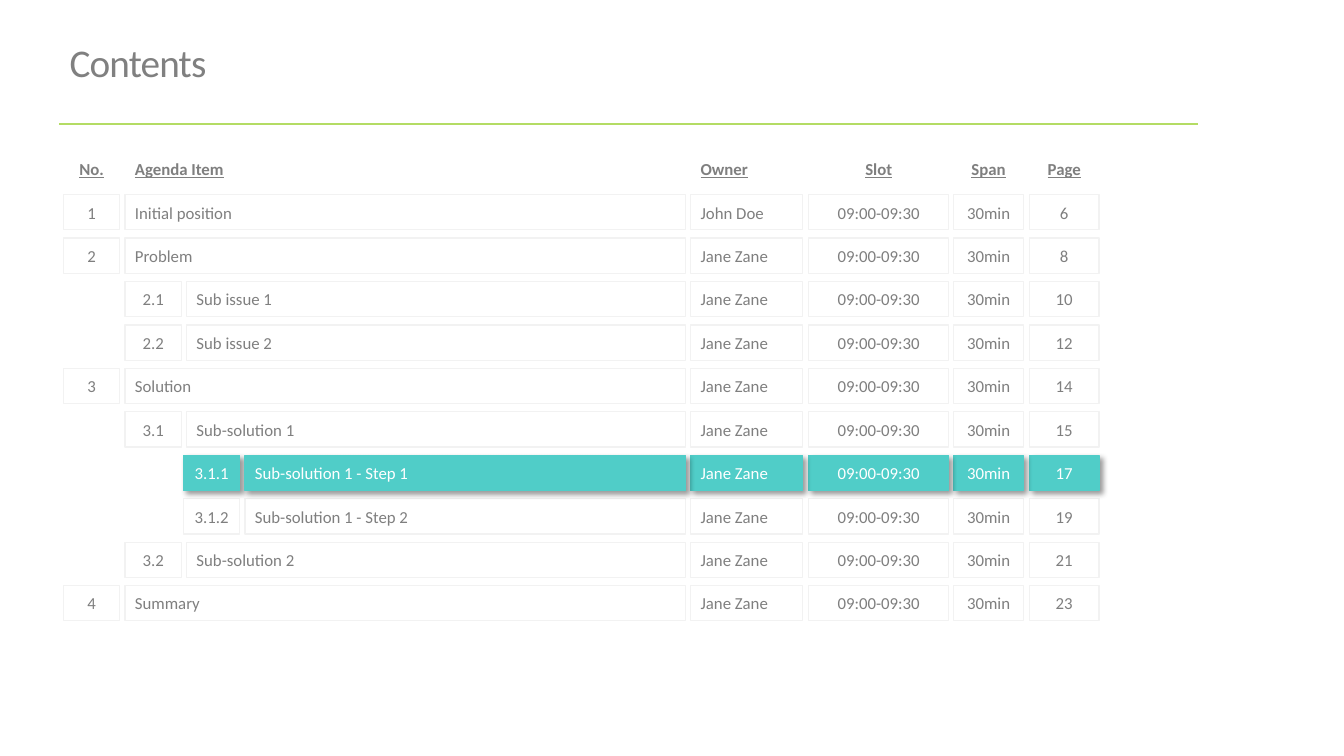
"""Build a one-slide agenda with numbered, indented items and one highlighted step."""
from lxml import etree
from pptx import Presentation
from pptx.dml.color import RGBColor
from pptx.enum.shapes import MSO_CONNECTOR, MSO_SHAPE
from pptx.enum.text import MSO_ANCHOR, MSO_AUTO_SIZE, PP_ALIGN
from pptx.oxml import parse_xml
from pptx.oxml.ns import nsdecls, qn
from pptx.util import Inches, Pt

TITLE = "Contents"
HEADER = ("No.", "Agenda Item", "Owner", "Slot", "Span", "Page")
SLOT, SPAN = "09:00-09:30", "30min"
AGENDA = [
    ("1", "Initial position", "John Doe", SLOT, SPAN, "6"),
    ("2", "Problem", "Jane Zane", SLOT, SPAN, "8"),
    ("2.1", "Sub issue 1", "Jane Zane", SLOT, SPAN, "10"),
    ("2.2", "Sub issue 2", "Jane Zane", SLOT, SPAN, "12"),
    ("3", "Solution", "Jane Zane", SLOT, SPAN, "14"),
    ("3.1", "Sub-solution 1", "Jane Zane", SLOT, SPAN, "15"),
    ("3.1.1", "Sub-solution 1 - Step 1", "Jane Zane", SLOT, SPAN, "17"),
    ("3.1.2", "Sub-solution 1 - Step 2", "Jane Zane", SLOT, SPAN, "19"),
    ("3.2", "Sub-solution 2", "Jane Zane", SLOT, SPAN, "21"),
    ("4", "Summary", "Jane Zane", SLOT, SPAN, "23"),
]
CURRENT = "3.1.1"

FONT = "Calibri"
GREY, PALE, TEAL, WHITE = "7F7F7F", "F2F2F2", "50CDC8", "FFFFFF"
TITLE_GREY, GREEN = "808080", "B4DC64"

TOP, LAST_TOP, ROW_HEIGHT = 1.5, 5.81, 0.35
ROW_STEP = (LAST_TOP - TOP) / len(AGENDA)
LEVEL_LEFTS = (0.63, 1.24, 1.82)
NUMBER_WIDTH, GAP, ITEM_RIGHT = 0.56, 0.05, 6.8
DETAIL_COLUMNS = ((6.85, 1.11), (8.02, 1.39), (9.46, 0.69), (10.21, 0.69))
LEFT_ALIGNED = (1, 2)


def color(value):
    return RGBColor.from_string(value)


def write(frame, text, size=12, ink=GREY, align=PP_ALIGN.LEFT, heading=False):
    frame.text = text
    frame.vertical_anchor = MSO_ANCHOR.MIDDLE
    frame.auto_size = MSO_AUTO_SIZE.NONE
    paragraph = frame.paragraphs[0]
    paragraph.alignment = align
    font = paragraph.runs[0].font
    font.name, font.size = FONT, Pt(size)
    font.bold = font.underline = heading
    font.color.rgb = color(ink)
    return paragraph


def cast_shadow(cell):
    effects = cell._element.spPr.find(qn("a:effectLst"))
    effects.append(parse_xml(
        f'<a:outerShdw {nsdecls("a")} blurRad="{Pt(4)}" dist="{Pt(3)}" dir="2700000" '
        'algn="tl" rotWithShape="0"><a:srgbClr val="000000"><a:alpha val="40000"/>'
        '</a:srgbClr></a:outerShdw>'))


def columns(number):
    left = LEVEL_LEFTS[number.rstrip(".").count(".")]
    item_left = left + NUMBER_WIDTH + GAP
    return ((left, NUMBER_WIDTH), (item_left, ITEM_RIGHT - item_left)) + DETAIL_COLUMNS


def add_cell(slide, box, text, column, heading, current):
    if heading:
        cell = slide.shapes.add_textbox(*box)
    else:
        cell = slide.shapes.add_shape(MSO_SHAPE.RECTANGLE, *box)
        cell.shadow.inherit = False
        cell.line.color.rgb = color(TEAL if current else PALE)
        cell.line.width = Pt(0.85)
        if current:
            cell.fill.solid()
            cell.fill.fore_color.rgb = color(TEAL)
            cast_shadow(cell)
        else:
            cell.fill.background()
    frame = cell.text_frame
    write(frame, text, ink=WHITE if current else GREY, heading=heading,
          align=PP_ALIGN.LEFT if column in LEFT_ALIGNED else PP_ALIGN.CENTER)
    frame.word_wrap = column != 0
    if column == 0:
        frame.margin_left = frame.margin_right = frame.margin_top = frame.margin_bottom = 0


def add_row(slide, index, entries):
    top = TOP + index * ROW_STEP
    places = columns(entries[0])
    for column in (5, 4, 3, 2, 0, 1):
        left, width = places[column]
        box = [Inches(length) for length in (left, top, width, ROW_HEIGHT)]
        add_cell(slide, box, entries[column], column, index == 0, entries[0] == CURRENT)


def add_heading(slide):
    title = slide.shapes.title
    title.left, title.top = Inches(0.59), Inches(0.18)
    title.width, title.height = Inches(11.25), Inches(0.93)
    paragraph = write(title.text_frame, TITLE, size=28, ink=TITLE_GREY)
    paragraph.line_spacing = 0.9
    paragraph.runs[0].font._element.set("spc", "-60")
    rule = slide.shapes.add_connector(
        MSO_CONNECTOR.STRAIGHT, Inches(0.59), Inches(1.23), Inches(11.88), Inches(1.23))
    rule.line.color.rgb = color(GREEN)
    rule.line.width = Pt(2)
    etree.SubElement(rule._element.spPr, qn("a:effectLst"))


def main():
    deck = Presentation()
    deck.slide_width, deck.slide_height = Inches(13.33), Inches(7.5)
    slide = deck.slides.add_slide(deck.slide_layouts[5])
    add_heading(slide)
    for index, entries in reversed(list(enumerate([HEADER] + AGENDA))):
        add_row(slide, index, entries)
    deck.save("out.pptx")


if __name__ == "__main__":
    main()
